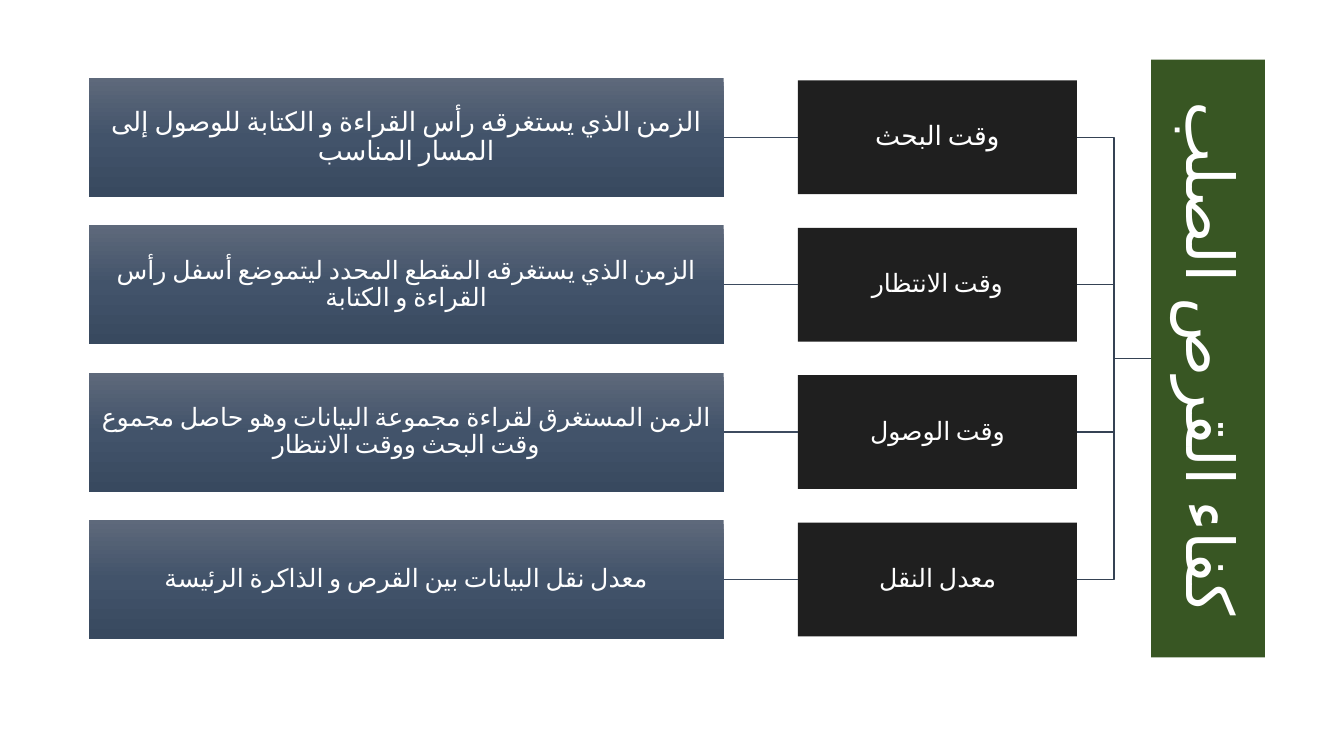
from copy import deepcopy
from dataclasses import dataclass

from pptx import Presentation
from pptx.enum import lang, shapes, text
from pptx.oxml import ns, xmlchemy
from pptx.util import Pt

COLOURS = {
    "white": "FFFFFF",
    "title": "385623",
    "label": "1F1F1F",
    "branch": "354254",
    "link": "3D4B5F",
}
DETAIL_GRADIENT = {0: "5E697B", 0.5: "42536A", 1: "38495F"}
FIRST_CENTRE, ROW_PITCH = 98.1, 105.3
DETAIL_LEFT, DETAIL_WIDTH, DETAIL_HEIGHT = 63.5, 453.5, 85
LABEL_LEFT, LABEL_WIDTH, LABEL_HEIGHT = 570, 199.3, 81.3
TITLE_LENGTH, TITLE_THICKNESS, TITLE_LEFT = 427, 81.3, 822.2


@dataclass(frozen=True)
class Measure:
    label: str
    detail: str
    size: int


MEASURES = [
    Measure("وقت البحث",
            "الزمن الذي يستغرقه رأس القراءة و الكتابة للوصول إلى المسار المناسب", 19),
    Measure("وقت الانتظار",
            "الزمن الذي يستغرقه المقطع المحدد ليتموضع أسفل رأس القراءة و الكتابة", 18),
    Measure("وقت الوصول",
            "الزمن المستغرق لقراءة مجموعة البيانات وهو حاصل مجموع وقت البحث ووقت الانتظار", 18),
    Measure("معدل النقل",
            "معدل نقل البيانات بين القرص و الذاكرة الرئيسة", 18),
]


def rgb(value: str):
    return xmlchemy.OxmlElement and RGBColor.from_string(value)


def write(box, words: str, *, size: float, inset: float = 0.9,
          colour: str = COLOURS["white"], typeface: str = "Calibri") -> None:
    frame = box.text_frame
    frame.word_wrap = True
    frame.auto_size = text.MSO_AUTO_SIZE.NONE
    frame.vertical_anchor = text.MSO_ANCHOR.MIDDLE
    frame.margin_left = frame.margin_right = Pt(inset)
    frame.margin_top = frame.margin_bottom = Pt(inset)
    paragraph = frame.paragraphs[0]
    paragraph.alignment = text.PP_ALIGN.CENTER
    paragraph.line_spacing = 0.9
    paragraph._p.get_or_add_pPr().set("rtl", "1")
    run = paragraph.add_run()
    run.text = words
    run.font.size = Pt(size)
    run.font.name = typeface
    run.font.language_id = lang.MSO_LANGUAGE_ID.ARABIC
    run.font.color.rgb = rgb(colour)
    arabic_font = xmlchemy.OxmlElement("a:cs")
    arabic_font.set("typeface", typeface)
    run.font._element.append(arabic_font)


def add_panel(slide, left: float, centre: float, width: float, height: float):
    panel = slide.shapes.add_shape(
        shapes.MSO_SHAPE.RECTANGLE,
        Pt(left), Pt(centre - height / 2), Pt(width), Pt(height))
    panel.shadow.inherit = False
    panel.line.fill.background()
    return panel


def fill_gradient(panel, stops: dict[float, str]) -> None:
    panel.fill.gradient()
    panel.fill.gradient_angle = 270
    stop_list = next(panel.element.spPr.iter(ns.qn("a:gsLst")))
    stop_list.append(deepcopy(stop_list[0]))
    for stop, (position, colour) in zip(panel.fill.gradient_stops, stops.items()):
        stop.position = position
        stop.color.rgb = rgb(colour)


def add_line(slide, kind, start: tuple[float, float], end: tuple[float, float], colour: str):
    line = slide.shapes.add_connector(kind, *map(Pt, start + end))
    line.line.color.rgb = rgb(colour)
    line.line.width = Pt(1)
    line._element.spPr.append(xmlchemy.OxmlElement("a:effectLst"))
    return line


def add_title(slide, centre: float) -> None:
    title = slide.shapes.title
    title.left = Pt(TITLE_LEFT + (TITLE_THICKNESS - TITLE_LENGTH) / 2)
    title.top = Pt(centre - TITLE_THICKNESS / 2)
    title.width, title.height = Pt(TITLE_LENGTH), Pt(TITLE_THICKNESS)
    title.rotation = 90
    title.fill.solid()
    title.fill.fore_color.rgb = rgb(COLOURS["title"])
    write(title, "كفاء القرص الصلب", size=47, inset=2.3)


def add_measure(slide, measure: Measure, centre: float, title_centre: float) -> None:
    label = add_panel(slide, LABEL_LEFT, centre, LABEL_WIDTH, LABEL_HEIGHT)
    label.fill.solid()
    label.fill.fore_color.rgb = rgb(COLOURS["label"])
    write(label, measure.label, size=measure.size)

    detail = add_panel(slide, DETAIL_LEFT, centre, DETAIL_WIDTH, DETAIL_HEIGHT)
    fill_gradient(detail, DETAIL_GRADIENT)
    write(detail, measure.detail, size=measure.size)

    add_line(slide, shapes.MSO_CONNECTOR.ELBOW, (TITLE_LEFT, title_centre),
             (LABEL_LEFT + LABEL_WIDTH, centre), COLOURS["branch"])
    link = add_line(slide, shapes.MSO_CONNECTOR.STRAIGHT, (LABEL_LEFT, centre),
                    (DETAIL_LEFT + DETAIL_WIDTH, centre), COLOURS["link"])
    link.begin_connect(label, 1)
    link.end_connect(detail, 3)


def main() -> None:
    deck = Presentation()
    deck.slide_width, deck.slide_height = Pt(960), Pt(540)
    slide = deck.slides.add_slide(deck.slide_layouts.get_by_name("Title Only"))
    title_centre = FIRST_CENTRE + ROW_PITCH * (len(MEASURES) - 1) / 2
    add_title(slide, title_centre)
    for row, measure in enumerate(MEASURES):
        add_measure(slide, measure, FIRST_CENTRE + row * ROW_PITCH, title_centre)
    deck.save("out.pptx")


from pptx.dml.color import RGBColor

if __name__ == "__main__":
    main()
